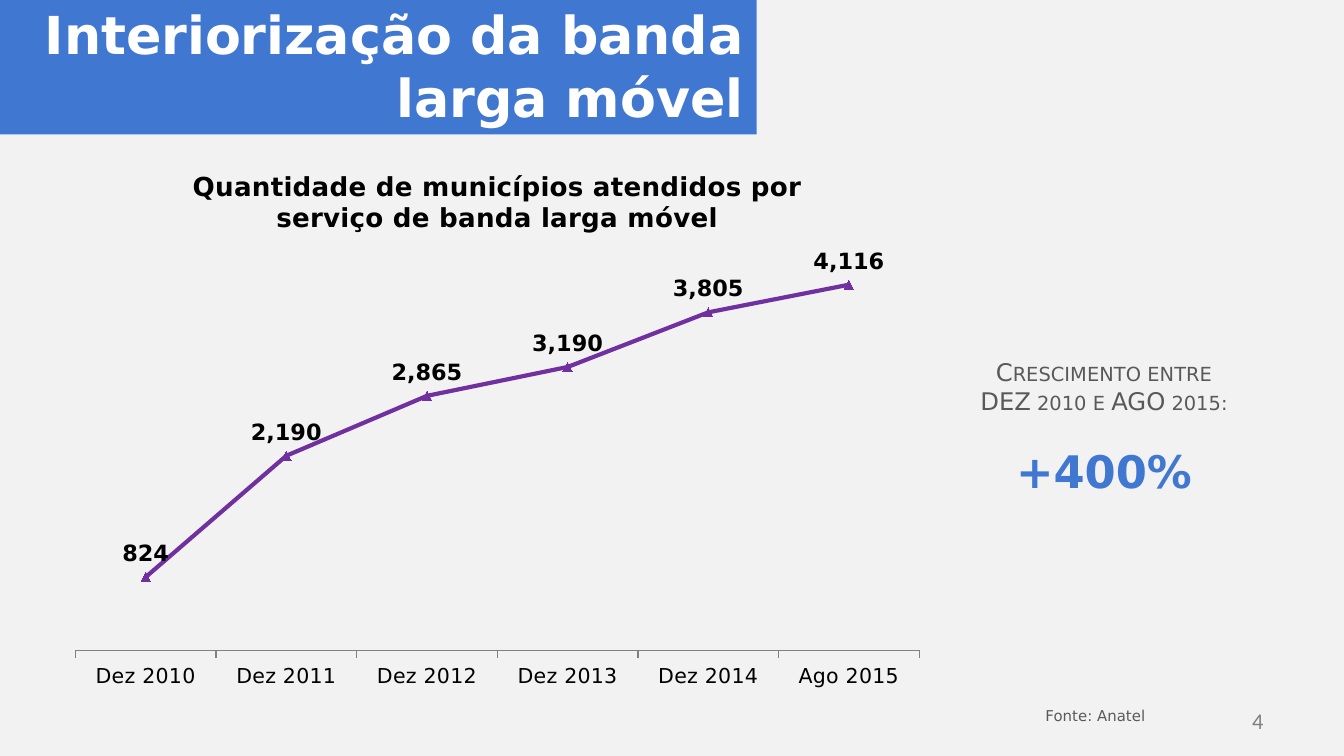
import pptx
import pptx.chart.data
import pptx.dml.color
import pptx.enum.chart
import pptx.enum.text
import pptx.enum.shapes
import pptx.oxml
import pptx.util

Pt = pptx.util.Pt
RGBColor = pptx.dml.color.RGBColor
ALIGN = pptx.enum.text.PP_ALIGN
ANCHOR = pptx.enum.text.MSO_ANCHOR

# Content
TITLE = "Interiorização da banda larga móvel"
CHART_TITLE = "Quantidade de municípios atendidos por serviço de banda larga móvel"
MUNICIPALITIES = {
    "Dez 2010": 824,
    "Dez 2011": 2190,
    "Dez 2012": 2865,
    "Dez 2013": 3190,
    "Dez 2014": 3805,
    "Ago 2015": 4116,
}
GROWTH_CAPTION = ["Crescimento entre", "DEZ 2010 e AGO 2015:"]
GROWTH_VALUE = "+400%"
SOURCE = "Fonte: Anatel"
PAGE_NUMBER = "4"

# Style
BACKGROUND = RGBColor(0xF2, 0xF2, 0xF2)
BLUE = RGBColor(0x3F, 0x77, 0xD1)
PURPLE = RGBColor(0x70, 0x30, 0xA0)
DARK_GREY = RGBColor(0x59, 0x59, 0x59)
GREY = RGBColor(0x80, 0x80, 0x80)
BLACK = RGBColor(0, 0, 0)
WHITE = RGBColor(0xFF, 0xFF, 0xFF)
FONT = "DejaVu Sans"

# Plot area as fractions of the chart
PLOT_LAYOUT = {"x": 0.02, "y": 0.19, "w": 0.96, "h": 0.72}


def style(font, size, color, bold=False, name=FONT):
    font.name, font.size, font.bold = name, Pt(size), bold
    font.color.rgb = color


def add_text(slide, box, lines, align, anchor=ANCHOR.TOP):
    """Add a text box; each line is (text, style arguments)."""
    frame = slide.shapes.add_textbox(*map(Pt, box)).text_frame
    frame.word_wrap = True
    frame.vertical_anchor = anchor
    frame.text = "\n".join(text for text, _ in lines)
    for paragraph, (_, look) in zip(frame.paragraphs, lines):
        paragraph.alignment = align
        style(paragraph.runs[0].font, *look)
    return frame


def add_title(slide):
    banner = slide.shapes.add_shape(
        pptx.enum.shapes.MSO_SHAPE.RECTANGLE, 0, 0, Pt(405.4), Pt(72))
    banner.shadow.inherit = False
    banner.fill.solid()
    banner.fill.fore_color.rgb = BLUE
    banner.line.fill.background()
    frame = banner.text_frame
    frame.word_wrap = True
    frame.vertical_anchor = ANCHOR.BOTTOM
    frame.text = TITLE
    frame.paragraphs[0].alignment = ALIGN.RIGHT
    style(frame.paragraphs[0].runs[0].font, 28, WHITE, True)


def set_plot_layout(chart):
    plot_area = chart._chartSpace.chart.plotArea
    for old in plot_area.xpath("c:layout"):
        plot_area.remove(old)
    values = "".join(f'<c:{k} val="{v}"/>' for k, v in PLOT_LAYOUT.items())
    plot_area.insert(0, pptx.oxml.parse_xml(
        '<c:layout xmlns:c="http://schemas.openxmlformats.org/drawingml/2006/chart">'
        '<c:manualLayout><c:layoutTarget val="inner"/><c:xMode val="edge"/>'
        f'<c:yMode val="edge"/>{values}</c:manualLayout></c:layout>'))


def add_coverage_chart(slide):
    enums = pptx.enum.chart
    data = pptx.chart.data.CategoryChartData(number_format="#,##0")
    data.categories = list(MUNICIPALITIES)
    data.add_series("Series 1", list(MUNICIPALITIES.values()))
    chart = slide.shapes.add_chart(
        enums.XL_CHART_TYPE.LINE_MARKERS,
        Pt(31), Pt(77.8), Pt(470.9), Pt(297.4), data).chart
    style(chart.font, 10, BLACK, name="Calibri")
    chart.has_legend = False
    chart.has_title = True
    chart.chart_title.include_in_layout = False
    heading = chart.chart_title.text_frame
    heading.text = CHART_TITLE
    style(heading.paragraphs[0].runs[0].font, 14, BLACK, True)
    set_plot_layout(chart)

    # Axes
    months = chart.category_axis
    months.major_tick_mark = enums.XL_TICK_MARK.OUTSIDE
    months.format.line.color.rgb = GREY
    style(months.tick_labels.font, 11, BLACK)
    counts = chart.value_axis
    counts.visible = False
    counts.has_major_gridlines = False
    counts.minimum_scale, counts.maximum_scale = 0, 4500

    # Line, markers and labels
    plot = chart.plots[0]
    plot.vary_by_categories = False
    coverage = plot.series[0]
    coverage.smooth = False
    coverage.format.line.color.rgb = PURPLE
    coverage.format.line.width = Pt(2.25)
    marker = coverage.marker
    marker.style, marker.size = enums.XL_MARKER_STYLE.TRIANGLE, 5
    marker.format.fill.solid()
    marker.format.fill.fore_color.rgb = PURPLE
    marker.format.line.color.rgb = PURPLE
    labels = coverage.data_labels
    labels.show_value = True
    labels.position = enums.XL_LABEL_POSITION.ABOVE
    labels.number_format = "#,##0"
    labels.number_format_is_linked = False
    style(labels.font, 12, BLACK, True)


def add_growth(slide):
    lines = [(text, (13, DARK_GREY)) for text in GROWTH_CAPTION]
    lines.append((GROWTH_VALUE, (24, BLUE, True)))
    frame = add_text(slide, (473, 187.9, 236.9, 80.6), lines, ALIGN.CENTER)
    *caption, value = frame.paragraphs
    for paragraph in caption:
        paragraph.runs[0].font._element.set("cap", "small")
    value.space_before = Pt(15)


def main():
    deck = pptx.Presentation()
    deck.slide_width, deck.slide_height = Pt(720), Pt(405)
    slide = deck.slides.add_slide(deck.slide_layouts[6])
    slide.background.fill.solid()
    slide.background.fill.fore_color.rgb = BACKGROUND

    add_text(slide, (516.2, 375.1, 167.8, 21.6),
             [(PAGE_NUMBER, (12, GREY, False, "Calibri"))],
             ALIGN.RIGHT, ANCHOR.MIDDLE)
    add_title(slide)
    add_text(slide, (553, 375.1, 81.4, 17.3),
             [(SOURCE, (8, DARK_GREY))], ALIGN.LEFT)
    add_coverage_chart(slide)
    add_growth(slide)
    deck.save("out.pptx")


if __name__ == "__main__":
    main()
